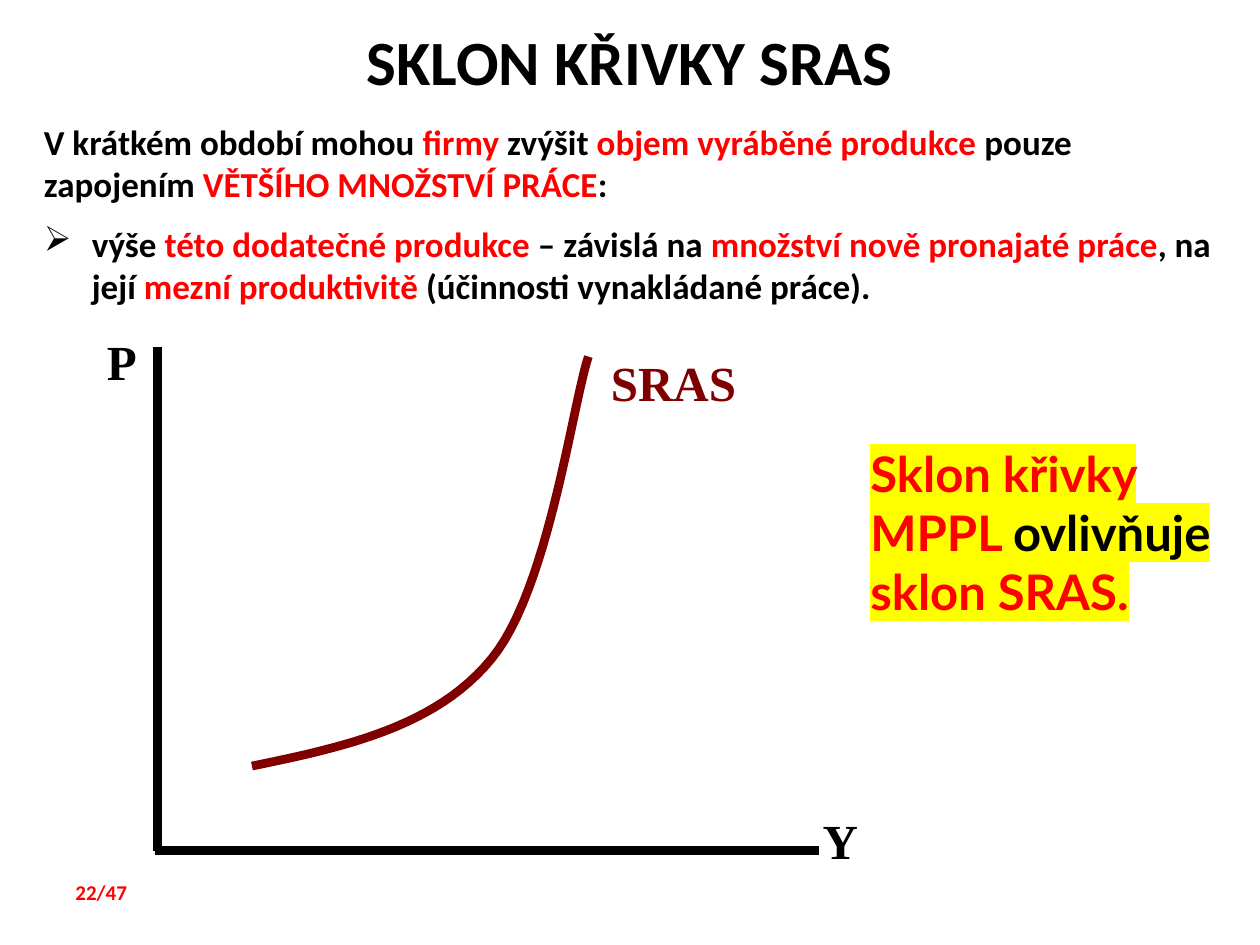
from dataclasses import dataclass

from lxml.etree import SubElement
from pptx import Presentation
from pptx.dml.color import RGBColor
from pptx.enum.shapes import MSO_CONNECTOR
from pptx.enum.text import MSO_AUTO_SIZE, PP_ALIGN
from pptx.oxml.ns import qn
from pptx.util import Inches, Pt


@dataclass(frozen=True)
class Theme:
    black: str = "000000"
    red: str = "FF0000"
    maroon: str = "800000"
    white: str = "FFFFFF"
    highlight: str = "FFFF00"
    body_font: str = "Calibri"
    note_font: str = "Lato"
    graph_font: str = "Times New Roman"
    title_size: int = 36
    graph_size: int = 28
    body_size: int = 20
    page_size: int = 12


theme = Theme()
deck = Presentation()
deck.slide_width, deck.slide_height = Inches(10), Inches(7.5)
slide = deck.slides.add_slide(deck.slide_layouts[6])


def add_text(place, paragraphs, font, size, highlight=None):
    """Add a box; each paragraph is a list of (text, colour) spans."""
    box = slide.shapes.add_textbox(*[Inches(length) for length in place])
    frame = box.text_frame
    frame.word_wrap = True
    frame.auto_size = MSO_AUTO_SIZE.SHAPE_TO_FIT_TEXT
    for index, spans in enumerate(paragraphs):
        para = frame.add_paragraph() if index else frame.paragraphs[0]
        if index:
            para.space_before = Pt(10)
            properties = para._p.get_or_add_pPr()
            properties.set("marL", str(Inches(0.38)))
            properties.set("indent", str(Inches(-0.38)))
            SubElement(properties, qn("a:buChar"), char="➢")
        para.font.name, para.font.size, para.font.bold = font, Pt(size), True
        for text, colour in spans:
            span = para.add_run()
            span.text = text
            span.font.color.rgb = RGBColor.from_string(colour)
            if highlight:
                mark = SubElement(span._r.get_or_add_rPr(), qn("a:highlight"))
                SubElement(mark, qn("a:srgbClr"), val=highlight)
    return box


# Explanation
add_text(
    (0.25, 0.91, 9.48, 1.62),
    [
        [
            ("V krátkém období mohou ", theme.black),
            ("firmy", theme.red),
            (" zvýšit ", theme.black),
            ("objem vyráběné produkce", theme.red),
            (" pouze zapojením ", theme.black),
            ("VĚTŠÍHO MNOŽSTVÍ PRÁCE", theme.red),
            (":", theme.black),
        ],
        [
            ("výše ", theme.black),
            ("této dodatečné produkce ", theme.red),
            ("– závislá na ", theme.black),
            ("množství nově pronajaté práce", theme.red),
            (", na její ", theme.black),
            ("mezní produktivitě ", theme.red),
            ("(účinnosti vynakládané práce).", theme.black),
        ],
    ],
    theme.body_font,
    theme.body_size,
)

# Graph axes
for start_x, start_y, end_x, end_y, width in (
    (1.25, 2.75, 1.25, 6.75, 5.5),
    (1.23, 6.75, 6.5, 6.75, 5),
):
    axis = slide.shapes.add_connector(
        MSO_CONNECTOR.STRAIGHT,
        Inches(start_x), Inches(start_y), Inches(end_x), Inches(end_y),
    )
    axis.line.color.rgb = RGBColor.from_string(theme.black)
    axis.line.width = Pt(width)
    SubElement(axis._element.spPr, qn("a:effectLst"))

# SRAS curve: points along two joined cubic Bézier segments
segments = (
    ((2, 6.08), (2.73, 5.93), (3.46, 5.77), (3.9, 5.23)),
    ((3.9, 5.23), (4.35, 4.69), (4.54, 3.23), (4.67, 2.83)),
)
steps = 24
points = []
for controls in segments:
    for step in range(1, steps + 1):
        t = step / steps
        weights = ((1 - t) ** 3, 3 * t * (1 - t) ** 2, 3 * t**2 * (1 - t), t**3)
        points.append([
            Inches(sum(weight * value for weight, value in zip(weights, values)))
            for values in zip(*controls)
        ])
start = [Inches(value) for value in segments[0][0]]
builder = slide.shapes.build_freeform(*start)
builder.add_line_segments(points, close=False)
curve = builder.convert_to_shape()
curve.shadow.inherit = False
curve.fill.background()
curve.line.color.rgb = RGBColor.from_string(theme.maroon)
curve.line.width = Pt(5)

# Graph labels
for label, place, colour in (
    ("P", (0.75, 2.58, 0.67, 0.57), theme.black),
    ("Y", (6.43, 6.38, 0.67, 0.57), theme.black),
    ("SRAS", (4.75, 2.75, 1.42, 0.57), theme.maroon),
):
    add_text(place, [[(label, colour)]], theme.graph_font, theme.graph_size)

# Conclusion
add_text(
    (6.81, 3.47, 2.92, 1.99),
    [[
        ("Sklon křivky MPPL ", theme.red),
        ("ovlivňuje ", theme.black),
        ("sklon SRAS.", theme.red),
    ]],
    theme.note_font,
    theme.graph_size,
    theme.highlight,
)

# Title and page number
title = add_text(
    (0, 0.13, 10, 0.7),
    [[("SKLON KŘIVKY SRAS", theme.black)]],
    theme.body_font,
    theme.title_size,
)
title.fill.solid()
title.fill.fore_color.rgb = RGBColor.from_string(theme.white)
title.text_frame.paragraphs[0].alignment = PP_ALIGN.CENTER
add_text(
    (0.5, 6.93, 0.92, 0.3),
    [[("22/47", theme.red)]],
    theme.body_font,
    theme.page_size,
)

deck.save("out.pptx")
